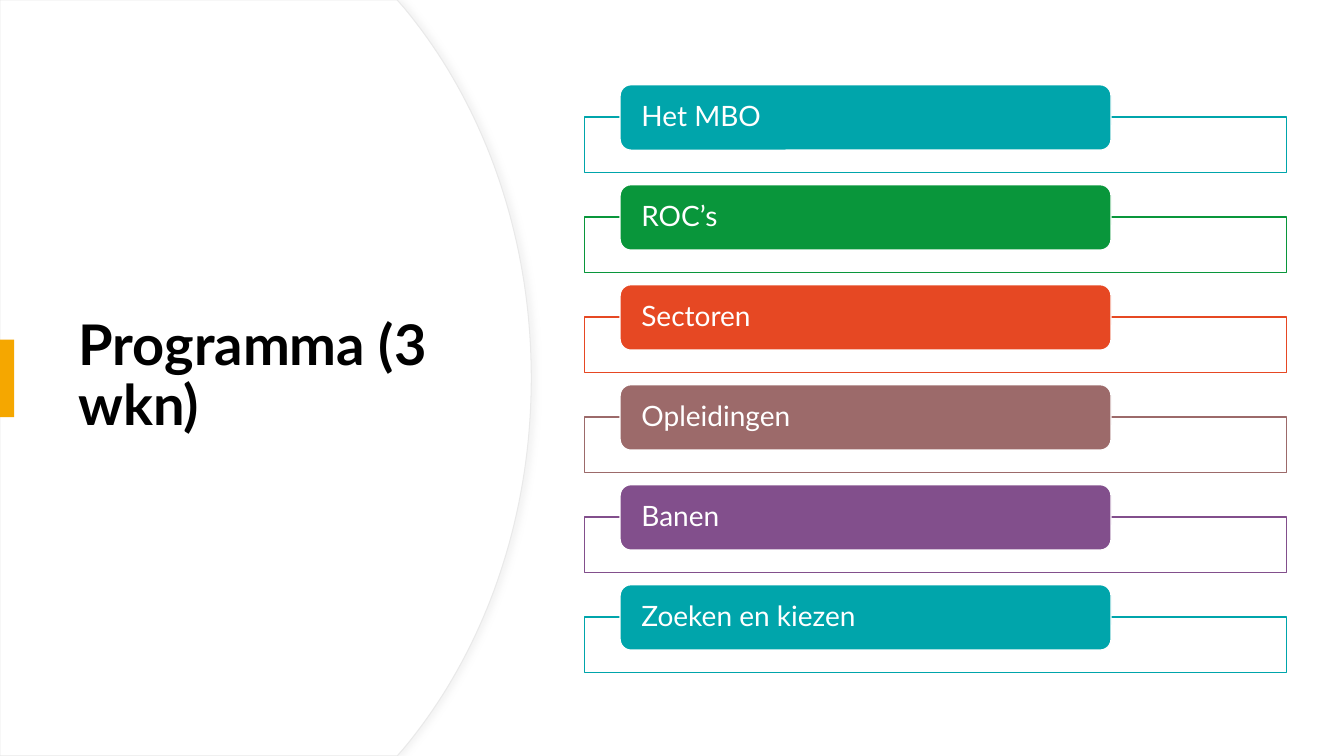
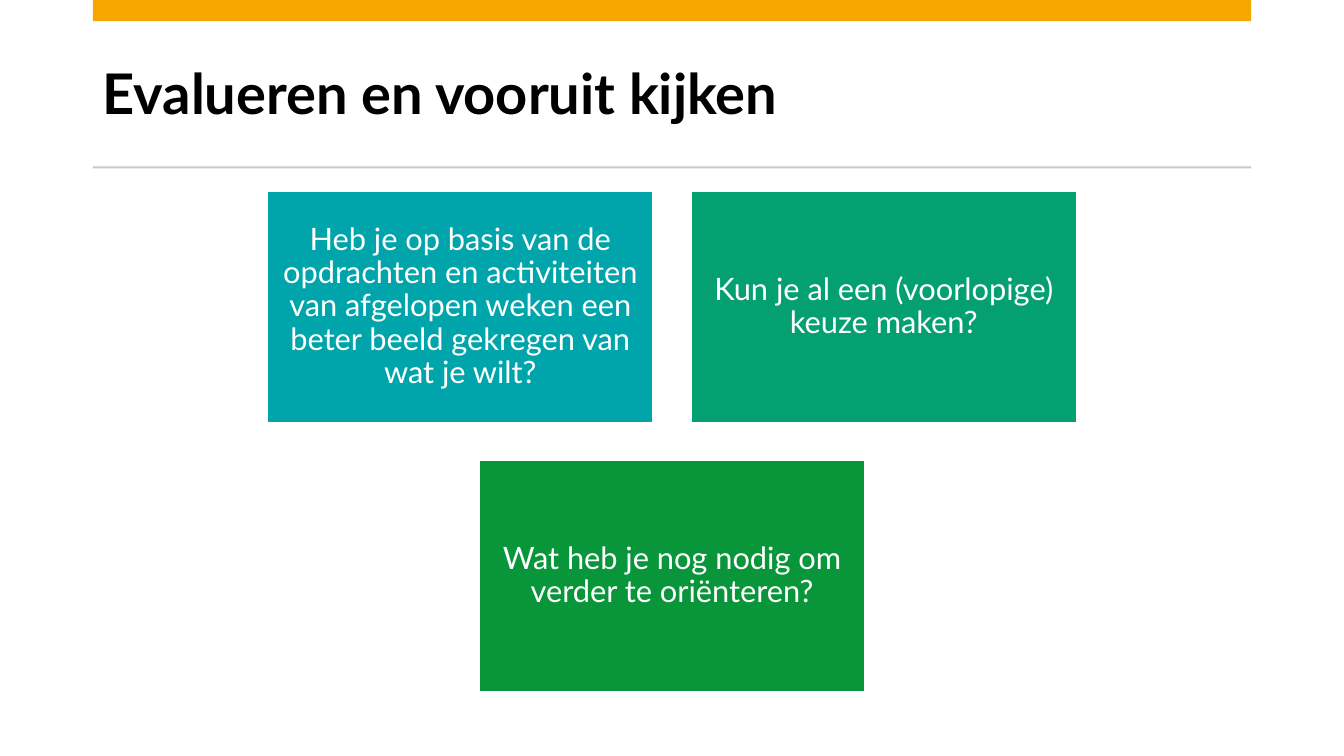
from lxml import etree
from pptx import Presentation
from pptx.dml.color import RGBColor
from pptx.enum.shapes import MSO_SHAPE
from pptx.enum.text import MSO_ANCHOR, PP_ALIGN
from pptx.oxml.ns import qn
from pptx.util import Inches, Pt

RECT = MSO_SHAPE.RECTANGLE
ROUND = MSO_SHAPE.ROUNDED_RECTANGLE
MIDDLE = MSO_ANCHOR.MIDDLE
LEFT = PP_ALIGN.LEFT
CENTER = PP_ALIGN.CENTER

WIDE, HIGH = 13.33, 7.5
FONT = "Lato"
COLORS = {
    "white": "FFFFFF", "black": "000000", "amber": "F5A700",
    "teal": "00A5AB", "green": "09963B", "orange": "E64823",
    "rose": "9C6A6A", "purple": "824F8C", "jade": "05A071",
    "rule": "C9C9C9", "edge": "E9E9E9", "shade": "D9D9D9",
}

PLAN = {
    "title": "Programma (3 wkn)",
    "steps": [
        ("Het MBO", "teal"),
        ("ROC’s", "green"),
        ("Sectoren", "orange"),
        ("Opleidingen", "rose"),
        ("Banen", "purple"),
        ("Zoeken en kiezen", "teal"),
    ],
}
REVIEW = {
    "title": "Evalueren en vooruit kijken",
    "rows": [
        [
            ("Heb je op basis van de opdrachten en activiteiten van afgelopen "
             "weken een beter beeld gekregen van wat je wilt?", "teal"),
            ("Kun je al een (voorlopige) keuze maken?", "jade"),
        ],
        [("Wat heb je nog nodig om verder te oriënteren?", "green")],
    ],
}


def color(name):
    return RGBColor.from_string(COLORS[name])


def paint(shape, fill, line=None, width=1):
    shape.shadow.inherit = False
    shape.fill.solid()
    shape.fill.fore_color.rgb = color(fill)
    if line:
        shape.line.color.rgb = color(line)
        shape.line.width = Pt(width)
    else:
        shape.line.fill.background()


def add_box(slide, box, fill, line=None, kind=RECT):
    shape = slide.shapes.add_shape(kind, *map(Inches, box))
    paint(shape, fill, line)
    return shape


def write(shape, text, size=20, ink="white", bold=False, align=LEFT,
          pad=(0.1, 0.05)):
    frame = shape.text_frame
    frame.word_wrap = True
    frame.vertical_anchor = MIDDLE
    frame.margin_left = frame.margin_right = Inches(pad[0])
    frame.margin_top = frame.margin_bottom = Inches(pad[1])
    para = frame.paragraphs[0]
    para.alignment = align
    para.line_spacing = 0.9
    run = para.add_run()
    run.text = text
    run.font.name = FONT
    run.font.size = Pt(size)
    run.font.bold = bold
    run.font.color.rgb = color(ink)


def add_title(slide, text, box, mark):
    shape = slide.shapes.add_textbox(*map(Inches, box))
    write(shape, text, size=40, ink="black", bold=True)
    add_box(slide, mark, "amber")


def add_glow(shape):
    effects = shape.element.spPr.find(qn("a:effectLst"))
    glow = etree.SubElement(effects, qn("a:outerShdw"), blurRad=str(Pt(4)),
                            dist=str(Pt(3)), dir="0", rotWithShape="0")
    tone = etree.SubElement(glow, qn("a:srgbClr"), val=COLORS["shade"])
    etree.SubElement(tone, qn("a:alpha"), val="30000")


def curve(knots, count=40):
    points = []
    for step in range(count + 1):
        t = step / count
        parts = ((1 - t) ** 3, 3 * t * (1 - t) ** 2, 3 * t * t * (1 - t), t ** 3)
        points.append(tuple(sum(p * k[axis] for p, k in zip(parts, knots))
                            for axis in (0, 1)))
    return points


def add_arc(slide):
    upper = [(3.94, 0)] + curve([(4.01, 0.08), (4.79, 1.02),
                                 (5.27, 2.32), (5.27, 3.75)])
    lower = [(x, HIGH - y) for x, y in reversed(upper[:-1])]
    points = upper + lower + [(0, HIGH)]
    draft = slide.shapes.build_freeform(0, 0)
    draft.add_line_segments([(Inches(x), Inches(y)) for x, y in points])
    shape = draft.convert_to_shape()
    paint(shape, "white", "edge", 0.75)
    add_glow(shape)


def build_plan(slide):
    add_arc(slide)
    add_title(slide, PLAN["title"], (0.68, 1.27, 3.94, 4.95),
              (0, 3.37, 0.14, 0.77))
    steps = PLAN["steps"]
    first, last = 0.84, 5.8
    pitch = (last - first) / (len(steps) - 1)
    for i, (text, tint) in enumerate(steps):
        top = first + i * pitch
        add_box(slide, (5.8, top + 0.32, 6.96, 0.55), "white", tint)
        bar = add_box(slide, (6.15, top, 4.87, 0.65), tint, "white", ROUND)
        write(bar, text, pad=(0.18, 0))


def build_review(slide):
    left, width = 0.92, 11.49
    add_title(slide, REVIEW["title"], (left, 0.37, width, 1.18),
              (left, 0, width, 0.21))
    add_box(slide, (left, 1.65, width, 0.02), "rule")
    wide, high, gap, top = 3.82, 2.29, 0.38, 1.9
    for r, row in enumerate(REVIEW["rows"]):
        start = (WIDE - len(row) * (wide + gap) + gap) / 2
        for c, (text, tint) in enumerate(row):
            box = (start + c * (wide + gap), top + r * (high + gap), wide, high)
            card = add_box(slide, box, tint, "white")
            write(card, text, size=22, align=CENTER, pad=(0.09, 0.09))


def main():
    deck = Presentation()
    deck.slide_width, deck.slide_height = Inches(WIDE), Inches(HIGH)
    for build in (build_plan, build_review):
        build(deck.slides.add_slide(deck.slide_layouts[6]))
    deck.save("out.pptx")


if __name__ == "__main__":
    main()
